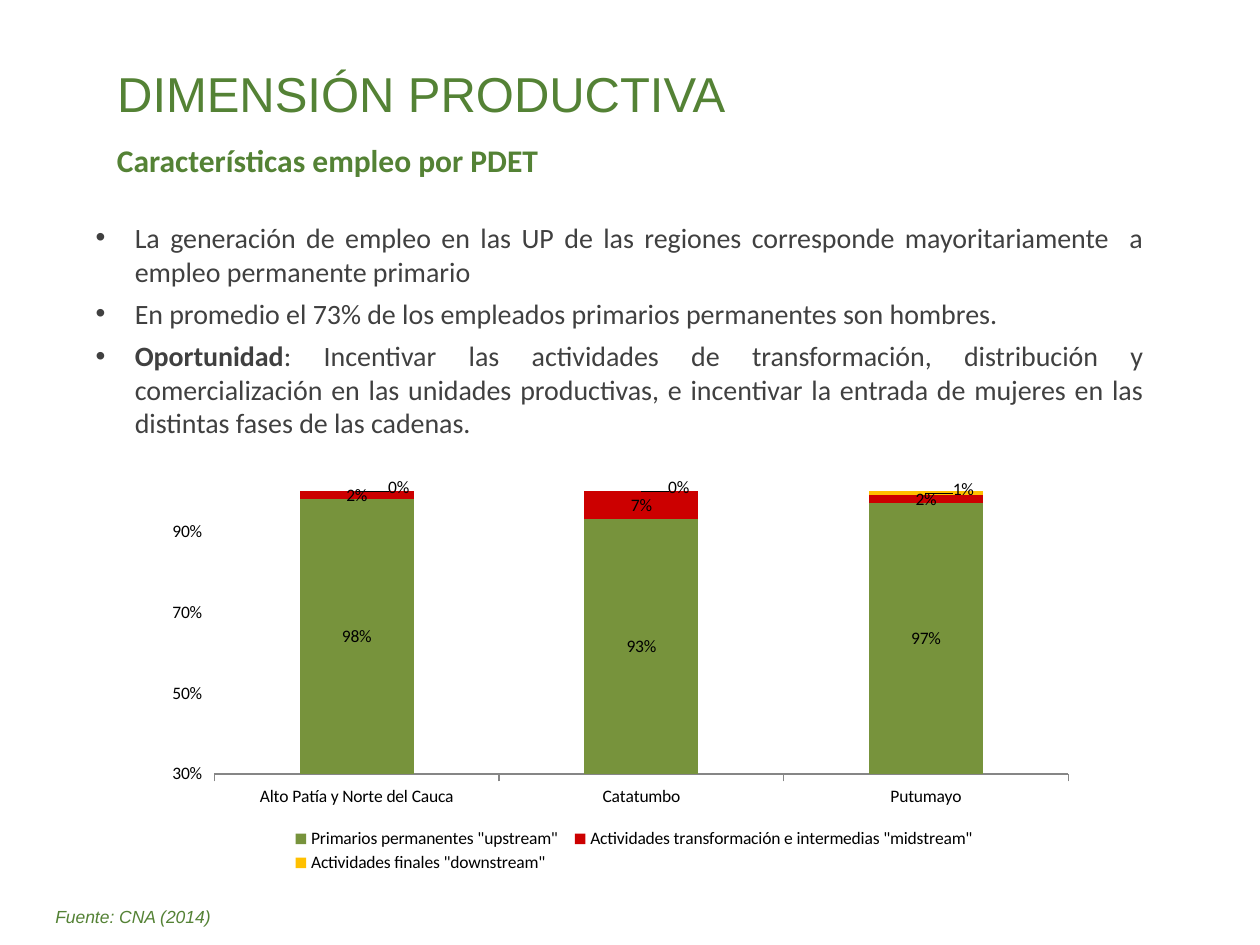
import pptx
import pptx.chart.data
import pptx.dml.color
import pptx.enum.chart
import pptx.enum.text
import pptx.oxml
import pptx.oxml.ns
import pptx.util

Inches = pptx.util.Inches
Pt = pptx.util.Pt
ALIGN = pptx.enum.text.PP_ALIGN
ANCHOR = pptx.enum.text.MSO_ANCHOR
FIT = pptx.enum.text.MSO_AUTO_SIZE
KIND = pptx.enum.chart.XL_CHART_TYPE
TICK = pptx.enum.chart.XL_TICK_MARK
COLORS = {
    "green": "548235",
    "gray": "404040",
    "black": "000000",
    "axis": "868686",
    "up": "77933C",
    "mid": "CC0000",
    "down": "FFC000",
}


def tint(name):
    return pptx.dml.color.RGBColor.from_string(COLORS[name])


def write(par, text, size=16, face="Calibri", color="green", bold=False, slant=False):
    run = par.add_run()
    run.text = text
    font = run.font
    font.size = Pt(size)
    font.name = face
    font.color.rgb = tint(color)
    font.bold = bold
    font.italic = slant


def place(node, index, **parts):
    for old in node.findall(pptx.oxml.ns.qn("c:layout")):
        node.remove(old)
    tags = "".join(f'<c:{tag} val="{val}"/>' for tag, val in parts.items())
    node.insert(index, pptx.oxml.parse_xml(
        f'<c:layout {pptx.oxml.ns.nsdecls("c")}><c:manualLayout>{tags}'
        "</c:manualLayout></c:layout>"))


class Deck:
    def __init__(self, face="Arial", text="Calibri"):
        self.face = face
        self.text = text
        self.show = pptx.Presentation()
        self.show.slide_width = Inches(10)
        self.show.slide_height = Inches(7.5)
        self.slide = self.show.slides.add_slide(self.show.slide_layouts[1])

    def move(self, shape, left, top, width, height):
        shape.left, shape.top = Inches(left), Inches(top)
        shape.width, shape.height = Inches(width), Inches(height)
        frame = shape.text_frame
        frame.word_wrap = True
        frame.auto_size = FIT.NONE
        return frame

    def title(self, text, *box):
        frame = self.move(self.slide.shapes.title, *box)
        frame.vertical_anchor = ANCHOR.MIDDLE
        par = frame.paragraphs[0]
        par.alignment = ALIGN.LEFT
        write(par, text, size=28, face=self.face)

    def label(self, text, *box, **style):
        shape = self.slide.shapes.add_textbox(*map(Inches, box))
        frame = self.move(shape, *box)
        write(frame.paragraphs[0], text, **style)

    def list(self, items, *box):
        frame = self.move(self.slide.placeholders[1], *box)
        for num, item in enumerate(items):
            par = frame.add_paragraph() if num else frame.paragraphs[0]
            props = par._p.get_or_add_pPr()
            props.set("marL", str(Inches(0.31)))
            props.set("indent", str(-Inches(0.31)))
            par.alignment = ALIGN.JUSTIFY
            par.space_before = Pt(5 if num else 0)
            for text, bold in item:
                write(par, text, face=self.text, color="gray", bold=bold)

    def chart(self, names, rows, shifts, *box):
        data = pptx.chart.data.CategoryChartData(number_format="0%")
        data.categories = names
        for name, color, vals in rows:
            data.add_series(name, vals)
        chart = self.slide.shapes.add_chart(
            KIND.COLUMN_STACKED_100, *map(Inches, box), data).chart
        chart.has_title = False
        chart.font.size = Pt(10)
        chart.font.name = self.text
        chart.font.color.rgb = tint("black")
        self.axes(chart)
        chart.has_legend = True
        chart.legend.position = pptx.enum.chart.XL_LEGEND_POSITION.BOTTOM
        chart.legend.include_in_layout = False
        place(chart.legend._element, 1, xMode="edge", yMode="edge",
              x=0.14, y=0.87, w=0.75, h=0.13)
        area = chart._chartSpace.chart.plotArea
        place(area, 0, layoutTarget="inner", xMode="edge", yMode="edge",
              x=0.065, y=0.037, w=0.916, h=0.706)
        plot = chart.plots[0]
        plot.gap_width = 150
        plot.overlap = 100
        plot.vary_by_categories = False
        for line, (name, color, vals) in zip(plot.series, rows):
            line.format.fill.solid()
            line.format.fill.fore_color.rgb = tint(color)
            tags = line.data_labels
            tags.show_value = True
            tags.number_format = "0%"
            tags.number_format_is_linked = False
        self.shift(plot.series[-1], shifts)

    def axes(self, chart):
        side = chart.value_axis
        side.minimum_scale = 0.3
        side.maximum_scale = 1
        side.major_unit = 0.2
        side.has_major_gridlines = False
        side.major_tick_mark = TICK.OUTSIDE
        side.format.line.fill.background()
        side.tick_labels.number_format = "0%"
        side.tick_labels.number_format_is_linked = False
        base = chart.category_axis
        base.major_tick_mark = TICK.OUTSIDE
        base.format.line.color.rgb = tint("axis")
        base.format.line.width = Pt(0.75)

    def shift(self, line, shifts):
        for num, (x, y) in enumerate(shifts):
            tag = line.points[num].data_label
            tag.position = pptx.enum.chart.XL_LABEL_POSITION.CENTER
        for node, (x, y) in zip(line._element.iter(pptx.oxml.ns.qn("c:dLbl")), shifts):
            place(node, 1, x=x, y=y)


def main():
    deck = Deck()
    deck.title("DIMENSIÓN PRODUCTIVA", 0.83, 0.21, 8.66, 1.05)
    deck.label("Características empleo por PDET", 0.83, 1.07, 8.66, 0.4,
               size=18, bold=True)
    deck.list([
        [("La generación de empleo en las UP de las regiones corresponde "
          "mayoritariamente  a empleo permanente primario", False)],
        [("En promedio el 73% de los empleados primarios permanentes son hombres.",
          False)],
        [("Oportunidad", True),
         (": Incentivar las actividades de transformación, distribución y "
          "comercialización en las unidades productivas, e incentivar la entrada "
          "de mujeres en las distintas fases de las cadenas.", False)],
    ], 0.66, 1.7, 8.52, 1.85)
    deck.chart(
        ["Alto Patía y Norte del Cauca", "Catatumbo", "Putumayo"],
        [
            ('Primarios permanentes "upstream"', "up", (0.98, 0.93, 0.97)),
            ('Actividades transformación e intermedias "midstream"', "mid",
             (0.02, 0.07, 0.02)),
            ('Actividades finales "downstream"', "down", (0, 0, 0.01)),
        ],
        [(0.045, -0.01), (0.04, -0.01), (0.04, -0.01)],
        1.22, 3.78, 7.4, 3.18)
    deck.label("Fuente: CNA (2014)", 0.34, 7.14, 9.29, 0.27,
               size=10, face=deck.face, slant=True)
    deck.show.save("out.pptx")


if __name__ == "__main__":
    main()
